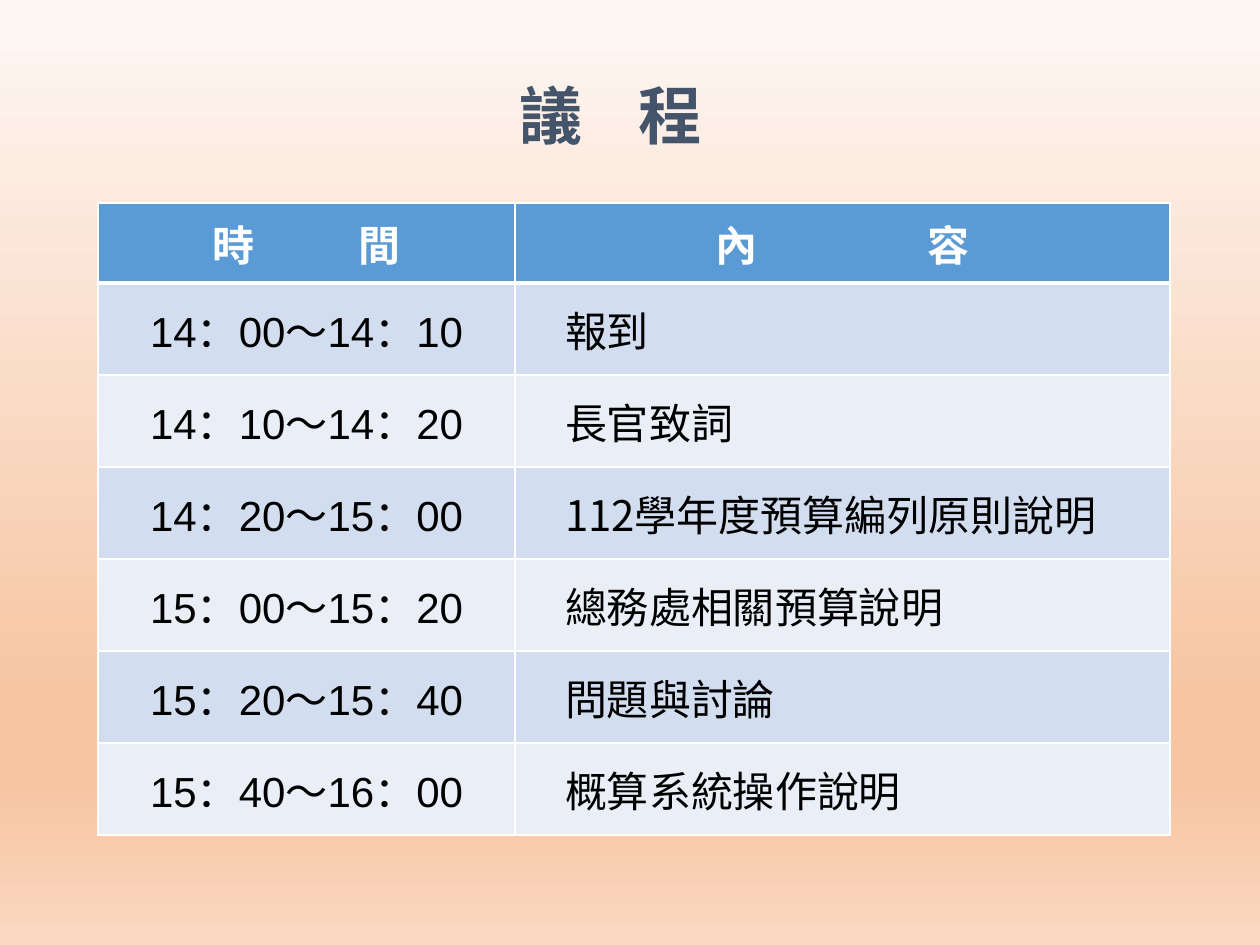
from lxml import etree
from pptx import Presentation
from pptx import util as u
from pptx.dml.color import RGBColor
from pptx.enum import text
from pptx.oxml import ns

EMU_PER_PX = 914400 / 126

SLATE = RGBColor(0x44, 0x54, 0x6A)
BLUE = RGBColor(0x5B, 0x9B, 0xD5)
WHITE = RGBColor(0xFF, 0xFF, 0xFF)
BLACK = RGBColor(0, 0, 0)
BANDS = RGBColor(0xD2, 0xDE, 0xEF), RGBColor(0xEA, 0xEF, 0xF7)
BACKGROUND_STOPS = (
    (0, RGBColor(0xFE, 0xF8, 0xF5)),
    (74, RGBColor(0xF7, 0xC5, 0xA2)),
    (83, RGBColor(0xF7, 0xC5, 0xA2)),
    (100, RGBColor(0xFA, 0xD8, 0xC1)),
)

CJK = "Noto Sans CJK SC"
COLUMNS = 417, 655
HEADER_HEIGHT, ROW_HEIGHT = 80, 92
HEADERS = ("時", "間", 27), ("內", "容", 46)
AGENDA = (
    ("14：00〜14：10", "報到"),
    ("14：10〜14：20", "長官致詞"),
    ("14：20〜15：00", "112學年度預算編列原則說明"),
    ("15：00〜15：20", "總務處相關預算說明"),
    ("15：20〜15：40", "問題與討論"),
    ("15：40〜16：00", "概算系統操作說明"),
)


def px(length):
    return u.Emu(round(length * EMU_PER_PX))


def add(parent, tag, **attributes):
    return etree.SubElement(parent, ns.qn(tag), attributes)


def paint_background(slide):
    fill = slide.background.fill
    fill.gradient()
    fill.gradient_angle = 270
    stops = next(slide.element.iter(ns.qn("a:gsLst")))
    for stop in list(stops):
        stops.remove(stop)
    for percent, color in BACKGROUND_STOPS:
        stop = add(stops, "a:gs", pos=str(percent * 1000))
        add(stop, "a:srgbClr", val=str(color))


def style_text(para, size, color, font=CJK, bold=False):
    para.font.size = u.Pt(size)
    para.font.bold = bold
    para.font.color.rgb = color
    para.font.name = font
    for span in para.runs:
        span.font.name = font
        add(span.font._element, "a:ea", typeface=CJK)


def add_spread_word(para, first, last, spacing):
    """Two characters held apart by character spacing, in points."""
    span = para.add_run()
    span.text = first + " "
    span.font._element.set("spc", str(spacing * 100))
    para.add_run().text = last
    para.alignment = text.PP_ALIGN.CENTER


def add_title(slide):
    box = slide.shapes.add_textbox(px(24), px(76), px(1173), px(83))
    frame = box.text_frame
    frame.word_wrap = True
    frame.margin_left = frame.margin_right = 0
    para = frame.paragraphs[0]
    para.line_spacing = 0.95
    add_spread_word(para, "議", "程", 12)
    style_text(para, 36, SLATE, bold=True)


def format_cell(cell, color, bottom=1):
    cell.vertical_anchor = text.MSO_ANCHOR.MIDDLE
    cell.margin_left = cell.margin_right = px(2)
    cell.margin_top = cell.margin_bottom = 0
    # Borders come before the fill in the cell properties
    properties = cell._tc.get_or_add_tcPr()
    for side, width in (("L", 1), ("R", 1), ("T", 1), ("B", bottom)):
        line = add(properties, f"a:ln{side}", w=str(u.Pt(width)))
        add(add(line, "a:solidFill"), "a:srgbClr", val=str(WHITE))
    cell.fill.solid()
    cell.fill.fore_color.rgb = color


def add_agenda(slide):
    height = HEADER_HEIGHT + ROW_HEIGHT * len(AGENDA)
    table = slide.shapes.add_table(
        len(AGENDA) + 1, len(COLUMNS), px(98), px(203), px(sum(COLUMNS)), px(height)
    ).table
    table.horz_banding = False
    for column, width in zip(table.columns, COLUMNS):
        column.width = px(width)
    for index, row in enumerate(table.rows):
        row.height = px(ROW_HEIGHT if index else HEADER_HEIGHT)

    # Header row
    for column, (first, last, spacing) in enumerate(HEADERS):
        cell = table.cell(0, column)
        format_cell(cell, BLUE, bottom=3)
        para = cell.text_frame.paragraphs[0]
        add_spread_word(para, first, last, spacing)
        style_text(para, 24, WHITE, bold=True)

    # Time and topic rows
    for index, (time, topic) in enumerate(AGENDA):
        for column, (words, font) in enumerate(((time, "Arial"), (topic, CJK))):
            cell = table.cell(index + 1, column)
            format_cell(cell, BANDS[index % 2], bottom=1)
            para = cell.text_frame.paragraphs[0]
            para.add_run().text = words
            style_text(para, 24, BLACK, font)
            if column == 0:
                para.alignment = text.PP_ALIGN.CENTER
            else:
                indent = para._p.get_or_add_pPr()
                indent.set("marL", str(px(48)))
                indent.set("indent", "0")


def main():
    deck = Presentation()
    deck.slide_width, deck.slide_height = px(1260), px(945)
    slide = deck.slides.add_slide(deck.slide_layouts[6])
    paint_background(slide)
    add_title(slide)
    add_agenda(slide)
    deck.save("out.pptx")


if __name__ == "__main__":
    main()
